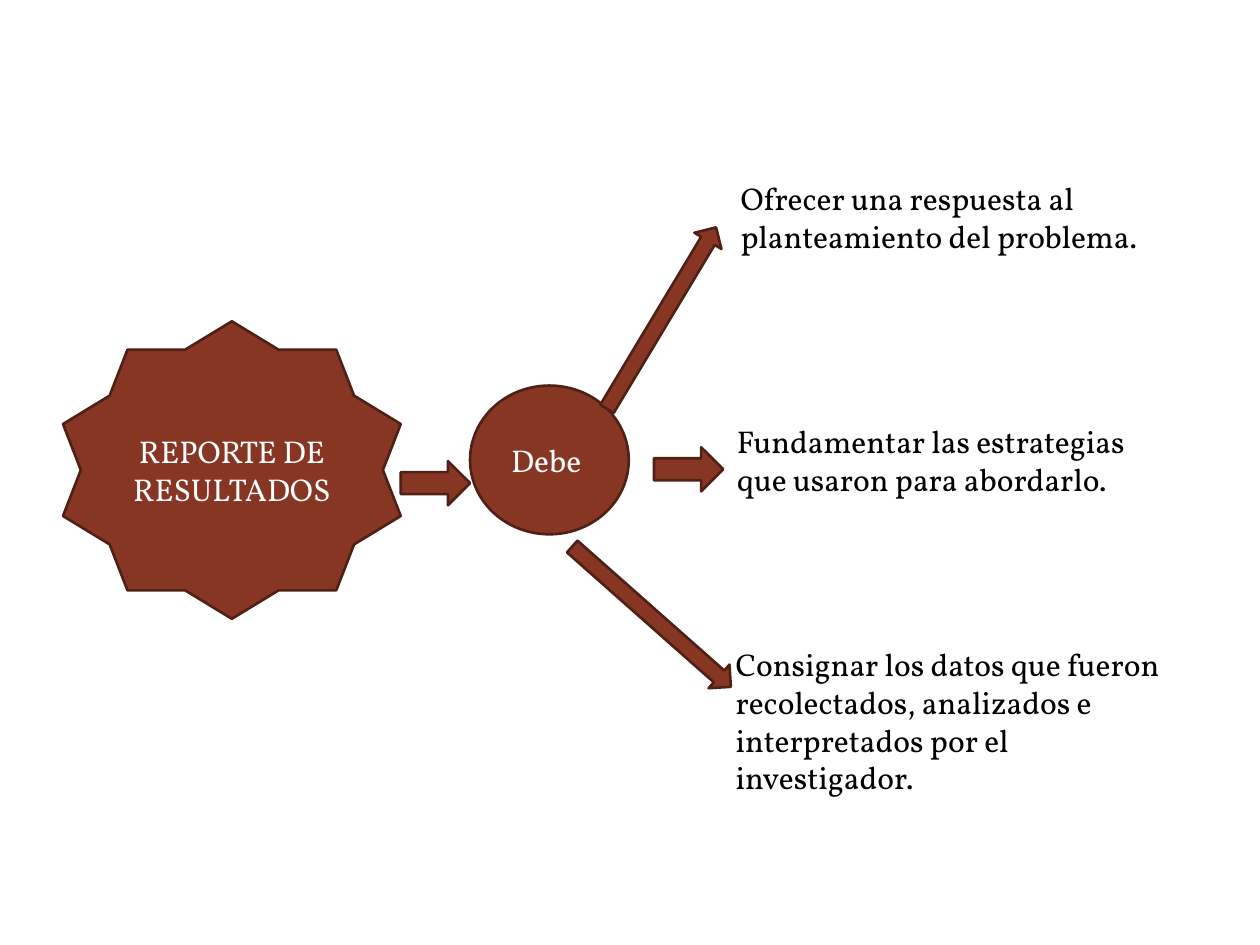
from pptx import Presentation
from pptx.dml.color import RGBColor
from pptx.enum.shapes import MSO_SHAPE
from pptx.enum.text import MSO_ANCHOR, MSO_AUTO_SIZE, PP_ALIGN
from pptx.util import Pt

RUST = RGBColor(0x87, 0x36, 0x24)
DARK_RUST = RGBColor(0x4F, 0x20, 0x15)
WHITE = RGBColor(0xFF, 0xFF, 0xFF)
BLACK = RGBColor(0, 0, 0)
FONT = "Vollkorn"

BRANCHES = [
    ("Ofrecer una respuesta al planteamiento del problema.",
     (416.2, 98.6, 266.4, 51.1), (317.5, 172.8, 121, 18), 301),
    ("Fundamentar las estrategias que usaron para abordarlo.",
     (414, 237.6, 266.4, 51.1), (373.7, 255.6, 39.6, 25.2), 0),
    ("Consignar los datos que fueron recolectados, analizados e "
     "interpretados por el investigador.",
     (413.3, 365, 266.4, 94.3), (311.8, 343.4, 121, 18), 41.5),
]


def write(tf, text, color=BLACK, size=18, align=PP_ALIGN.LEFT, anchor=MSO_ANCHOR.TOP):
    """Put formatted text into a text frame."""
    tf.word_wrap = True
    tf.vertical_anchor = anchor
    p = tf.paragraphs[0]
    p.alignment = align
    r = p.add_run()
    r.text = text
    r.font.name = FONT
    r.font.size = Pt(size)
    r.font.color.rgb = color


def add_figure(s, kind, box, text="", rotation=0):
    """Add a rust preset shape with optional centred white text."""
    sp = s.shapes.add_shape(kind, *map(Pt, box))
    sp.shadow.inherit = False
    sp.rotation = rotation
    sp.fill.solid()
    sp.fill.fore_color.rgb = RUST
    sp.line.color.rgb = DARK_RUST
    sp.line.width = Pt(1.5)
    if text:
        write(sp.text_frame, text, color=WHITE, align=PP_ALIGN.CENTER,
              anchor=MSO_ANCHOR.MIDDLE)


def add_topic(s, left, top):
    """Add the star, the circle and the arrow between them."""
    add_figure(s, MSO_SHAPE.STAR_10_POINT, (left, top, 193, 170),
               "REPORTE DE RESULTADOS")
    add_figure(s, MSO_SHAPE.OVAL, (left + 232.6, top + 36.7, 90.7, 85), "Debe ")
    add_figure(s, MSO_SHAPE.RIGHT_ARROW, (left + 193, top + 79.9, 39.6, 25.2))


def add_branch(s, text, box, arrow_box, rotation):
    """Add one duty of the report and the arrow that leads to it."""
    tf = s.shapes.add_textbox(*map(Pt, box)).text_frame
    write(tf, text)
    tf.auto_size = MSO_AUTO_SIZE.SHAPE_TO_FIT_TEXT
    add_figure(s, MSO_SHAPE.RIGHT_ARROW, arrow_box, rotation=rotation)


def main():
    """Build the slide and save it."""
    prs = Presentation()
    prs.slide_width, prs.slide_height = Pt(720), Pt(540)
    s = prs.slides.add_slide(prs.slide_layouts[6])
    add_topic(s, 36, 183.6)
    for branch in BRANCHES:
        add_branch(s, *branch)
    prs.save("out.pptx")


if __name__ == "__main__":
    main()
